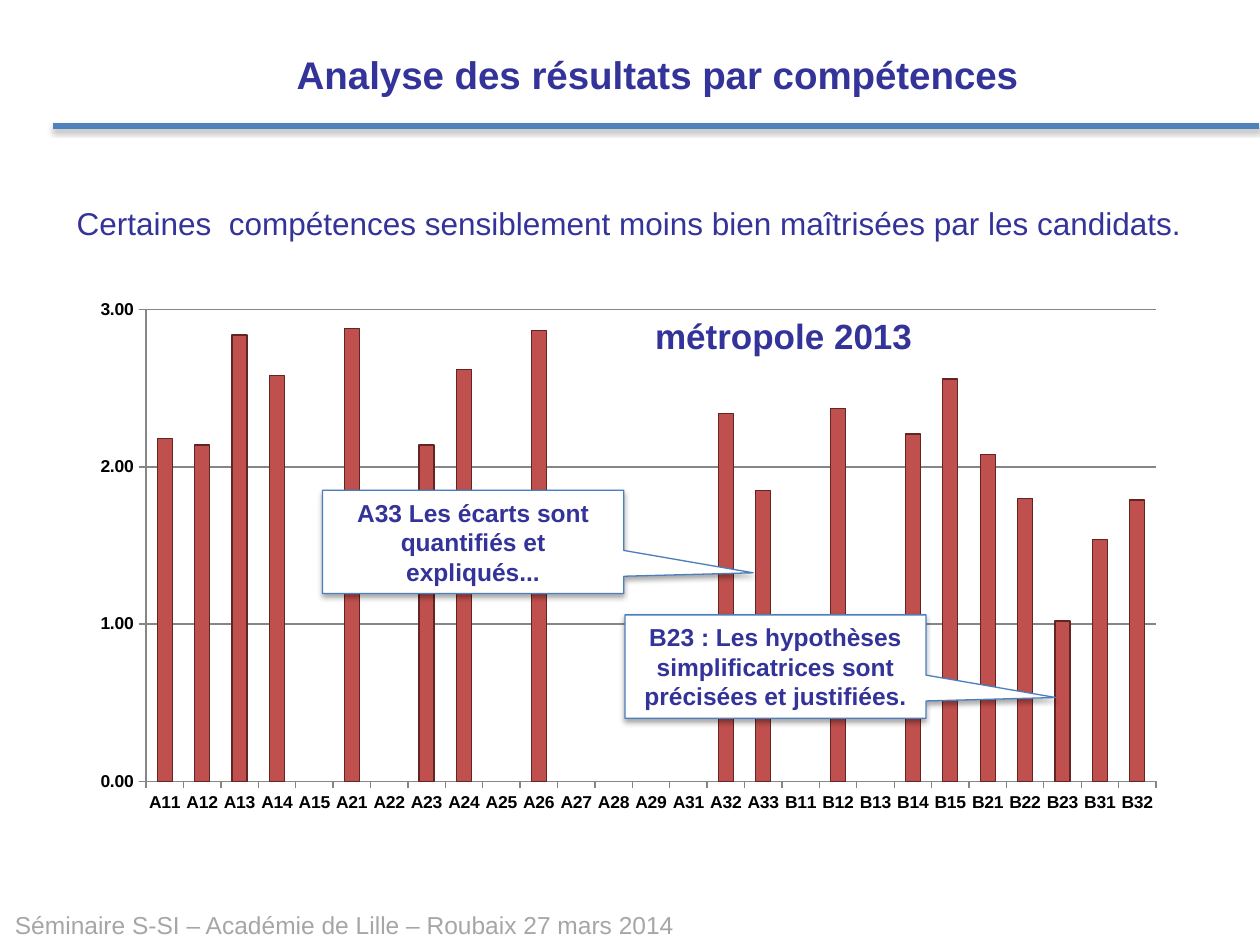
from lxml import etree
from pptx import Presentation
from pptx import util as u
from pptx.chart.data import CategoryChartData
from pptx.dml.color import RGBColor
from pptx.enum import chart as charts, shapes, text
from pptx.oxml import parse_xml
from pptx.oxml.ns import nsdecls, qn

COLORS = {
    "navy": "333399", "grey": "A6A6A6", "white": "FFFFFF", "black": "000000",
    "rule": "4F81BD", "outline": "4B7EBC", "bar": "C0504D",
    "bar_edge": "632523", "axis": "868686",
}
COLUMNS, ROWS = 100, 75
SCORES = {
    "A1": [2.18, 2.14, 2.84, 2.58, None],
    "A2": [2.88, None, 2.14, 2.62, None, 2.87, None, None, None],
    "A3": [None, 2.34, 1.85],
    "B1": [None, 2.37, None, 2.21, 2.56],
    "B2": [2.08, 1.8, 1.02],
    "B3": [1.54, 1.79],
}


def color(name):
    return RGBColor.from_string(COLORS[name])


def write(frame, content, size=14, tint="navy", bold=False, align=text.PP_ALIGN.LEFT):
    para = frame.paragraphs[0]
    para.alignment = align
    span = para.add_run()
    span.text = content
    span.font.name = "Arial"
    span.font.size = u.Pt(size)
    span.font.bold = bold
    span.font.color.rgb = color(tint)


def stroke(line, tint, width):
    line.color.rgb = color(tint)
    line.width = u.Pt(width)


def cast_shadow(shape):
    properties = shape._element.spPr
    for effects in properties.findall(qn("a:effectLst")):
        properties.remove(effects)
    properties.append(parse_xml(
        f'<a:effectLst {nsdecls("a")}>'
        '<a:outerShdw blurRad="40000" dist="23000" dir="5400000" rotWithShape="0">'
        f'<a:srgbClr val="{COLORS["black"]}"><a:alpha val="35000"/></a:srgbClr>'
        '</a:outerShdw></a:effectLst>'))


class Page:
    def __init__(self, deck):
        self.page = deck.slides.add_slide(deck.slide_layouts[6])
        self.column = deck.slide_width / COLUMNS
        self.row = deck.slide_height / ROWS

    def place(self, *lengths):
        steps = (self.column, self.row) * 2
        return [u.Emu(round(length * step)) for length, step in zip(lengths, steps)]

    def rule(self, *ends):
        line = self.page.shapes.add_connector(
            shapes.MSO_CONNECTOR.STRAIGHT, *self.place(*ends))
        stroke(line.line, "rule", 3.2)
        cast_shadow(line)

    def label(self, area, content, wrap=False, **style):
        box = self.page.shapes.add_textbox(*self.place(*area))
        box.text_frame.word_wrap = wrap
        box.text_frame.auto_size = text.MSO_AUTO_SIZE.SHAPE_TO_FIT_TEXT
        write(box.text_frame, content, **style)

    def callout(self, left, top, content):
        box = self.page.shapes.add_shape(
            shapes.MSO_SHAPE.RECTANGULAR_CALLOUT, *self.place(left, top, 23.9, 8.2))
        box.adjustments[0], box.adjustments[1] = 0.93, 0.3
        box.fill.solid()
        box.fill.fore_color.rgb = color("white")
        stroke(box.line, "outline", 0.75)
        cast_shadow(box)
        box.text_frame.word_wrap = True
        box.text_frame.vertical_anchor = text.MSO_ANCHOR.MIDDLE
        write(box.text_frame, content, bold=True, align=text.PP_ALIGN.CENTER)

    def bars(self, area, scores):
        data = CategoryChartData(number_format="0.00")
        data.categories = [f"{group}{number}" for group, values in scores.items()
                           for number in range(1, len(values) + 1)]
        data.add_series("Series 1", [value for values in scores.values() for value in values])
        chart = self.page.shapes.add_chart(
            charts.XL_CHART_TYPE.COLUMN_CLUSTERED, *self.place(*area), data).chart
        chart.has_legend = False
        chart.has_title = False
        chart.font.name = "Arial"
        chart.font.size = u.Pt(10)
        chart.font.bold = True
        chart.font.color.rgb = color("black")

        for axis in (chart.category_axis, chart.value_axis):
            axis.major_tick_mark = charts.XL_TICK_MARK.OUTSIDE
            axis.minor_tick_mark = charts.XL_TICK_MARK.NONE
            stroke(axis.format.line, "axis", 0.75)
        scale = chart.value_axis
        scale.minimum_scale, scale.maximum_scale, scale.major_unit = 0, 3, 1
        scale.tick_labels.number_format = "0.00"
        scale.tick_labels.number_format_is_linked = False
        scale.has_major_gridlines = True
        stroke(scale.major_gridlines.format.line, "axis", 0.75)

        plot = chart.plots[0]
        plot.gap_width = 150
        plot.vary_by_categories = False
        series = plot.series[0]
        series.format.fill.solid()
        series.format.fill.fore_color.rgb = color("bar")
        stroke(series.format.line, "bar_edge", 0.75)
        self.fix_plot(chart, x=0.044, y=0.037, w=0.956, h=0.923)

    def fix_plot(self, chart, **shares):
        plot_area = chart._chartSpace.chart.plotArea
        for layout in plot_area.findall(qn("c:layout")):
            plot_area.remove(layout)
        layout = etree.Element(qn("c:layout"))
        manual = etree.SubElement(layout, qn("c:manualLayout"))
        settings = {"layoutTarget": "inner", "xMode": "edge", "yMode": "edge", **shares}
        for name, value in settings.items():
            etree.SubElement(manual, qn(f"c:{name}")).set("val", str(value))
        plot_area.insert(0, layout)


def main():
    deck = Presentation()
    deck.slide_width, deck.slide_height = u.Inches(10), u.Inches(7.5)
    page = Page(deck)
    center = text.PP_ALIGN.CENTER
    page.rule(4.2, 10, 99.9, 10)
    page.label((0.2, 71.7, 54.7, 3.4),
               "Séminaire S-SI – Académie de Lille – Roubaix 27 mars 2014", tint="grey")
    page.label((18.1, 3.6, 68.2, 4.7), "Analyse des résultats par compétences",
               wrap=True, size=22, bold=True, align=center)
    page.bars((7.9, 23.1, 83.9, 41.4), SCORES)
    page.label((50.9, 24.5, 22.6, 4.4), "métropole 2013", size=20, bold=True, align=center)
    page.label((5.1, 15.7, 91.3, 4),
               "Certaines  compétences sensiblement moins bien maîtrisées par les candidats.",
               size=18)
    page.callout(49.6, 48.8,
                 "B23 : Les hypothèses simplificatrices sont précisées et justifiées.")
    page.callout(25.6, 38.9, "A33 Les écarts sont quantifiés et expliqués...")
    deck.save("out.pptx")


if __name__ == "__main__":
    main()
